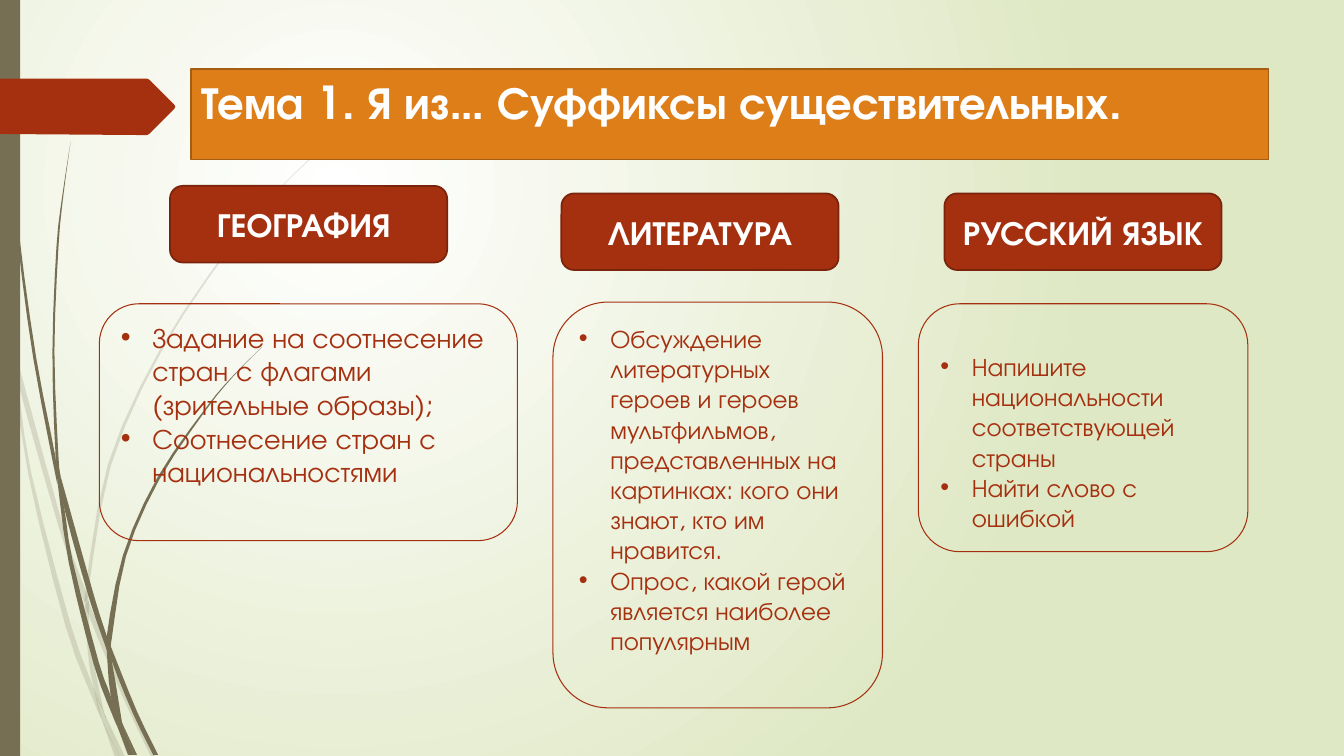
from lxml import etree
from pptx import Presentation
from pptx.dml.color import RGBColor
from pptx.enum.shapes import MSO_SHAPE
from pptx.enum.text import MSO_ANCHOR, PP_ALIGN
from pptx.oxml import parse_xml
from pptx.util import Pt

RECT = MSO_SHAPE.RECTANGLE
ROUND = MSO_SHAPE.FLOWCHART_ALTERNATE_PROCESS
TOP, MIDDLE = MSO_ANCHOR.TOP, MSO_ANCHOR.MIDDLE
LEFT, CENTER = PP_ALIGN.LEFT, PP_ALIGN.CENTER

WHITE = RGBColor(0xFF, 0xFF, 0xFF)
LIME = RGBColor(0xDF, 0xE8, 0xC4)
OLIVE = RGBColor(0x76, 0x6F, 0x54)
RED = RGBColor(0xA5, 0x30, 0x10)
MAROON = RGBColor(0x7A, 0x24, 0x0C)
ORANGE = RGBColor(0xDE, 0x7E, 0x18)
BROWN = RGBColor(0xA4, 0x5D, 0x12)

FONT = "TeX Gyre Adventor"
DRAW = "http://schemas.openxmlformats.org/drawingml/2006/main"
UNIT = 0.72
STEPS = 3

PALE = [
    ([(0, 299), (10, 344), (11, 350)], [(0, 282), (9, 322), (11, 350)]),
    ([(14, 345), (17, 376), (58, 522), (84, 599)],
     [(14, 345), (62, 520), (85, 586)]),
    ([(88, 596), (88, 610), (123, 694), (150, 751)],
     [(88, 596), (92, 607), (127, 692), (155, 751)]),
    ([(105, 711), (119, 751)], [(105, 711), (124, 751)]),
    ([(11, 350), (28, 470), (65, 621), (92, 693), (101, 714)],
     [(11, 350), (17, 376), (31, 469), (70, 619), (93, 683), (101, 714)]),
    ([(84, 599), (87, 646), (93, 683), (105, 711)],
     [(84, 599), (88, 610), (91, 646), (103, 706), (105, 711)]),
    ([(312, 153), (289, 175), (268, 197), (228, 244), (158, 348),
      (107, 461), (85, 584), (88, 596)],
     [(312, 154), (290, 175), (268, 198), (229, 245), (160, 349),
      (110, 462), (88, 584), (88, 596)]),
    ([(101, 714), (114, 751)], [(101, 714), (119, 751)]),
    ([(85, 586), (84, 599), (88, 610)], [(85, 586), (88, 596), (88, 610)]),
    ([(93, 683), (101, 714), (119, 751)],
     [(93, 683), (105, 711), (119, 751)]),
]
DARK = [
    ([(3, 0), (4, 48), (7, 110), (17, 233), (33, 355), (57, 481)],
     [(4, 0), (5, 48), (8, 109), (19, 232), (36, 355), (55, 453),
      (57, 481)]),
    ([(60, 472), (64, 505), (88, 592), (106, 645)],
     [(60, 472), (93, 590), (106, 631)]),
    ([(110, 641), (111, 656), (132, 708), (152, 749)],
     [(110, 641), (113, 649), (136, 706), (157, 749)]),
    ([(57, 477), (68, 557), (93, 659), (111, 708), (117, 722)],
     [(57, 477), (64, 505), (72, 556), (98, 657), (110, 691), (117, 722)]),
    ([(70, 141), (62, 193), (56, 245), (52, 349), (55, 449), (60, 472)],
     [(70, 141), (63, 193), (58, 245), (54, 349), (58, 453), (60, 472)]),
    ([(122, 719), (133, 749)], [(122, 719), (136, 749)]),
    ([(55, 449), (57, 477), (64, 505)], [(55, 449), (60, 472), (64, 505)]),
    ([(260, 344), (231, 373), (204, 405), (156, 474), (122, 551),
      (106, 631), (110, 641)],
     [(260, 344), (231, 374), (205, 406), (158, 476), (125, 552),
      (111, 633), (110, 641)]),
    ([(117, 722), (127, 749)], [(117, 722), (131, 749)]),
    ([(106, 645), (110, 691), (122, 719)],
     [(106, 645), (111, 656), (121, 716), (122, 719)]),
    ([(106, 631), (106, 645), (111, 656)],
     [(106, 631), (110, 641), (111, 656)]),
    ([(110, 691), (117, 722), (130, 749)],
     [(110, 691), (122, 719), (133, 749)]),
]
ARROW = [(0, 78), (146, 78), (148, 79), (173, 104), (174, 106), (173, 108),
         (148, 133), (146, 134), (136, 134), (0, 133)]

COLUMNS = [
    ("ГЕОГРАФИЯ ", (121.4, 132.8), (71, 217, 298.6, 169.2), 20, 3.6,
     ["Задание на соотнесение стран с флагами (зрительные образы);",
      "Соотнесение стран с национальностями"]),
    ("РУССКИЙ ЯЗЫК", (674.6, 138.2), (656, 217, 235.4, 177.1), 18, 25.2,
     ["Напишите национальности соответствующей страны",
      "Найти слово с ошибкой"]),
    ("ЛИТЕРАТУРА", (401, 138.2), (395, 215.8, 235.4, 289.8), 18, 3.6,
     ["Обсуждение литературных героев и героев мультфильмов, "
      "представленных на картинках: кого они знают, кто им нравится.",
      "Опрос, какой герой является наиболее популярным"]),
]


def paint(shape, fill=None, line=None, width=1.25):
    shape.shadow.inherit = False
    if fill is None:
        shape.fill.background()
    else:
        shape.fill.solid()
        shape.fill.fore_color.rgb = fill
    if line is None:
        shape.line.fill.background()
    else:
        shape.line.color.rgb = line
        shape.line.width = Pt(width)


def block(slide, kind, box, fill=None, line=None, width=1.25):
    shape = slide.shapes.add_shape(kind, *map(Pt, box))
    paint(shape, fill, line, width)
    return shape


def write(shape, texts, size, color, bold=False, align=LEFT, anchor=TOP):
    frame = shape.text_frame
    frame.word_wrap = True
    frame.vertical_anchor = anchor
    frame.text = "\n".join(texts)
    for para in frame.paragraphs:
        para.alignment = align
        para.font.name = FONT
        para.font.size = Pt(size)
        para.font.bold = bold
        para.font.color.rgb = color
    return frame


def bullet(para):
    props = para._p.get_or_add_pPr()
    props.set("marL", str(Pt(22.5)))
    props.set("indent", str(-Pt(22.5)))
    etree.SubElement(props, f"{{{DRAW}}}buFont", typeface="Arial")
    etree.SubElement(props, f"{{{DRAW}}}buChar", char="•")


def blend(a, b, c, d, t):
    return (2 * b + (c - a) * t + (2 * a - 5 * b + 4 * c - d) * t ** 2
            + (3 * b - a - 3 * c + d) * t ** 3) / 2


def curve(nodes):
    if len(nodes) == 2:
        return nodes
    ends = [nodes[0], *nodes, nodes[-1]]
    dots = [tuple(blend(*axis, step / STEPS) for axis in zip(*ends[i:i + 4]))
            for i in range(len(nodes) - 1) for step in range(STEPS)]
    return dots + [nodes[-1]]


def outline(shapes, nodes, origin, fill):
    left, top = origin
    dots = [(Pt(left + x * UNIT), Pt(top + y * UNIT)) for x, y in nodes]
    pen = shapes.build_freeform(*dots[0])
    pen.add_line_segments(dots[1:], close=True)
    shape = pen.convert_to_shape()
    paint(shape, fill)
    return shape


def plant(slide, origin, stalks, alpha):
    group = slide.shapes.add_group_shape()
    for near, far in stalks:
        nodes = curve(near) + curve(far)[::-1]
        shape = outline(group.shapes, nodes, origin, OLIVE)
        if alpha < 100:
            tint = shape.element.xpath("./p:spPr/a:solidFill/a:srgbClr")[0]
            etree.SubElement(tint, f"{{{DRAW}}}alpha", val=str(alpha * 1000))


def backdrop(slide):
    fill = slide.background.fill
    fill.gradient()
    for stop, color in zip(fill.gradient_stops, (WHITE, LIME)):
        stop.color.rgb = color
    grad = slide.element.xpath(".//p:bg//a:gradFill")[0]
    for line in grad.xpath("./a:lin"):
        grad.remove(line)
    grad.append(parse_xml(
        f'<a:path xmlns:a="{DRAW}" path="circle"><a:fillToRect '
        'l="50000" t="50000" r="100000" b="100000"/></a:path>'))


def decor(slide, box):
    left, top, _, height = box
    plant(slide, (left, top), PALE, 20)
    plant(slide, (left, top), DARK, 100)
    block(slide, RECT, (left, top, 14.4, height), OLIVE)
    outline(slide.shapes, ARROW, (left, top), RED)


def title(slide, box, text):
    shape = block(slide, RECT, box, ORANGE, BROWN)
    write(shape, [text], 32.4, WHITE, bold=True)


def column(slide, head, spot, box, size, inset, items):
    label = block(slide, ROUND, (*spot, 198, 54.7), RED, MAROON)
    write(label, [head], 24, WHITE, True, CENTER, MIDDLE)
    card = block(slide, ROUND, box, None, RED, 0.75)
    frame = write(card, items, size, RED)
    frame.margin_top = Pt(inset)
    for para in frame.paragraphs:
        bullet(para)


def main():
    deck = Presentation()
    deck.slide_width, deck.slide_height = Pt(960), Pt(540)
    slide = deck.slides.add_slide(deck.slide_layouts[6])
    backdrop(slide)
    decor(slide, (0, 0, 960, 540))
    title(slide, (136.7, 49.2, 769.4, 64.8),
          "Тема 1. Я из… Суффиксы существительных.")
    for parts in COLUMNS:
        column(slide, *parts)
    deck.save("out.pptx")


if __name__ == "__main__":
    main()
